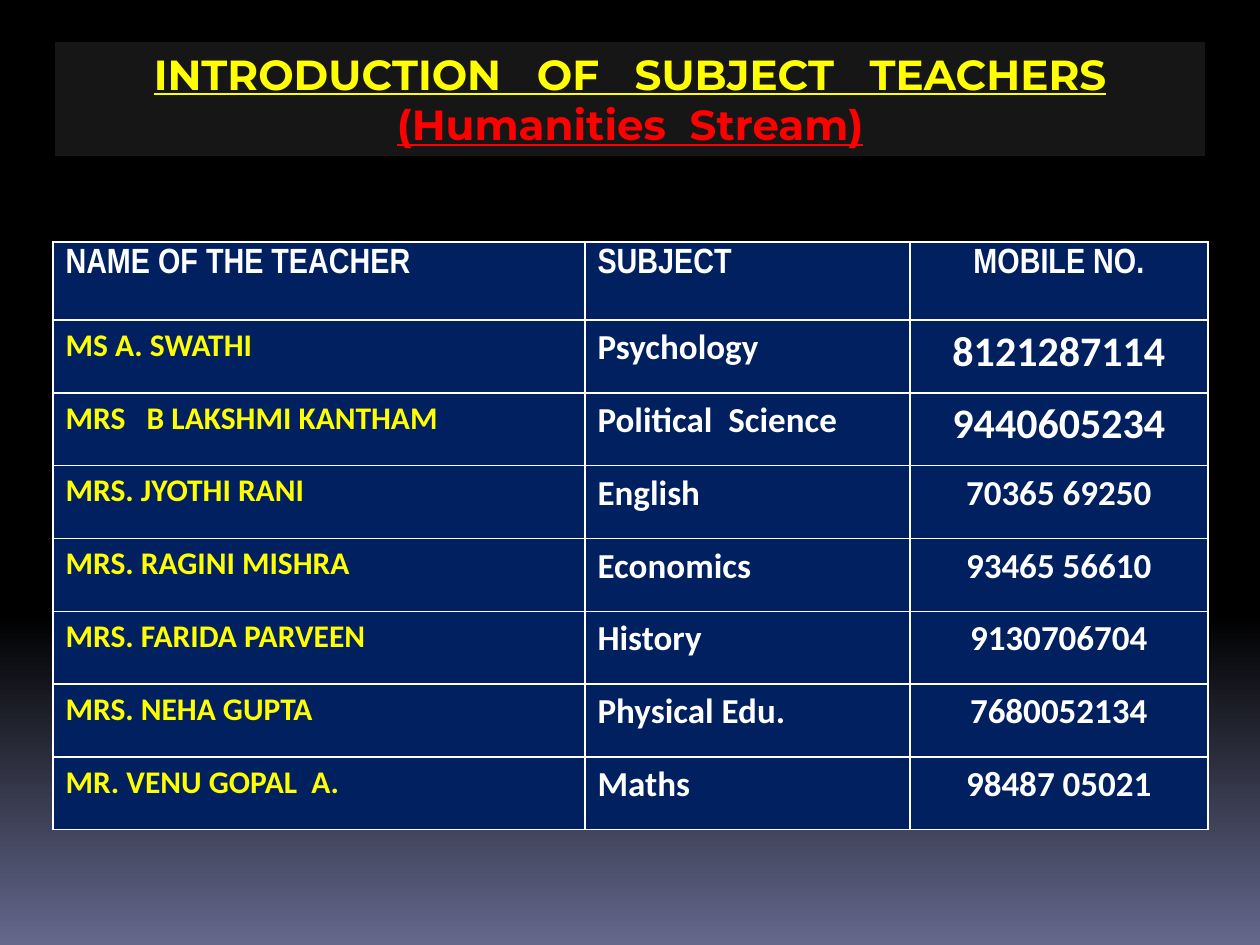
from copy import deepcopy
from dataclasses import dataclass

from lxml.etree import SubElement
from pptx import Presentation
from pptx.dml.color import RGBColor as RGB
from pptx.enum.shapes import MSO_SHAPE as SHAPE
from pptx.enum.text import MSO_ANCHOR as ANCHOR, PP_ALIGN as ALIGN
from pptx.oxml.ns import qn
from pptx.util import Emu, Pt

EMU_PER_PX = 914400 / 126


@dataclass(frozen=True)
class Theme:
    """Colours, fonts and type sizes of the slide."""
    black: str = "000000"
    dusk: str = "64688B"
    banner: str = "161616"
    navy: str = "002060"
    white: str = "FFFFFF"
    yellow: str = "FFFF00"
    red: str = "FF0000"
    title_font: str = "Montserrat"
    header_font: str = "Arial Narrow"
    body_font: str = "Calibri"
    title_size: int = 24
    large_size: int = 24
    body_size: int = 20
    name_size: int = 18
    border_width: int = 1


THEME = Theme()
TITLE_LINES = [
    ("INTRODUCTION   OF   SUBJECT   TEACHERS", THEME.yellow),
    ("(Humanities  Stream)", THEME.red),
]
HEADINGS = ("NAME OF THE TEACHER", "SUBJECT", "MOBILE NO.")
TEACHERS = [
    ("MS A. SWATHI", "Psychology", "8121287114"),
    ("MRS   B LAKSHMI KANTHAM", "Political  Science", "9440605234"),
    ("MRS. JYOTHI RANI", "English", "70365 69250"),
    ("MRS. RAGINI MISHRA", "Economics", "93465 56610"),
    ("MRS. FARIDA PARVEEN", "History", "9130706704"),
    ("MRS. NEHA GUPTA", "Physical Edu.", "7680052134"),
    ("MR. VENU GOPAL  A.", "Maths", "98487 05021"),
]
LARGE_MOBILES = 2
COLUMN_WIDTHS = (532, 325, 298)
HEADER_HEIGHT = 78


def px(length):
    """Turn pixels into EMU."""
    return Emu(round(length * EMU_PER_PX))


def add_run(paragraph, text, font, size, colour, underline=None):
    """Add one bold run to a paragraph."""
    run = paragraph.add_run()
    run.text = text
    run.font.name = font
    run.font.size = Pt(size)
    run.font.bold = True
    run.font.underline = underline
    run.font.color.rgb = RGB.from_string(colour)


def paint_background(slide):
    """Fade the background from black to dusk at the bottom."""
    fill = slide.background.fill
    fill.gradient()
    fill.gradient_angle = 270
    first_stop = slide.element.find(".//" + qn("a:gs"))
    first_stop.addnext(deepcopy(first_stop))
    fades = ((0, THEME.black), (0.65, THEME.black), (1, THEME.dusk))
    for stop, (position, colour) in zip(fill.gradient_stops, fades):
        stop.position = position
        stop.color.rgb = RGB.from_string(colour)


def add_title(slide, left, top, width, height):
    """Place the title banner in the given box."""
    banner = slide.shapes.add_shape(
        SHAPE.RECTANGLE, px(left), px(top), px(width), px(height))
    banner.shadow.inherit = False
    banner.fill.solid()
    banner.fill.fore_color.rgb = RGB.from_string(THEME.banner)
    banner.line.fill.background()
    frame = banner.text_frame
    frame.word_wrap = True
    frame.vertical_anchor = ANCHOR.TOP
    for index, (text, colour) in enumerate(TITLE_LINES):
        paragraph = frame.add_paragraph() if index else frame.paragraphs[0]
        paragraph.alignment = ALIGN.CENTER
        add_run(paragraph, text, THEME.title_font, THEME.title_size, colour, True)


def add_borders(cell):
    """Draw a white line on each side of a cell."""
    properties = cell._tc.get_or_add_tcPr()
    for position, side in enumerate(("lnL", "lnR", "lnT", "lnB")):
        line = properties.makeelement(
            qn("a:" + side), {"w": str(Pt(THEME.border_width))})
        properties.insert(position, line)
        SubElement(SubElement(line, qn("a:solidFill")),
                   qn("a:srgbClr"), val=THEME.white)


def cell_style(row, column):
    """Return the font, size and colour for a table position."""
    if row == 0:
        return THEME.header_font, THEME.body_size, THEME.white
    if column == 0:
        return THEME.body_font, THEME.name_size, THEME.yellow
    is_large = column == 2 and row <= LARGE_MOBILES
    size = THEME.large_size if is_large else THEME.body_size
    return THEME.body_font, size, THEME.white


def add_teachers(slide, left, top, width, height):
    """Place the table of teachers in the given box."""
    entries = [HEADINGS, *TEACHERS]
    table = slide.shapes.add_table(
        len(entries), len(HEADINGS),
        px(left), px(top), px(width), px(height)).table
    for column, column_width in zip(table.columns, COLUMN_WIDTHS):
        column.width = px(column_width)
    teacher_height = (height - HEADER_HEIGHT) / len(TEACHERS)
    for row, entry in enumerate(entries):
        table.rows[row].height = px(teacher_height if row else HEADER_HEIGHT)
        for column, text in enumerate(entry):
            cell = table.cell(row, column)
            cell.fill.solid()
            cell.fill.fore_color.rgb = RGB.from_string(THEME.navy)
            add_borders(cell)
            paragraph = cell.text_frame.paragraphs[0]
            paragraph.alignment = ALIGN.CENTER if column == 2 else ALIGN.LEFT
            add_run(paragraph, text, *cell_style(row, column))


def main():
    """Build the slide and save it."""
    deck = Presentation()
    deck.slide_width, deck.slide_height = px(1260), px(945)
    slide = deck.slides.add_slide(deck.slide_layouts[6])
    paint_background(slide)
    add_title(slide, 55, 42, 1150, 114)
    add_teachers(slide, 53, 242, sum(COLUMN_WIDTHS), 588)
    deck.save("out.pptx")


if __name__ == "__main__":
    main()
